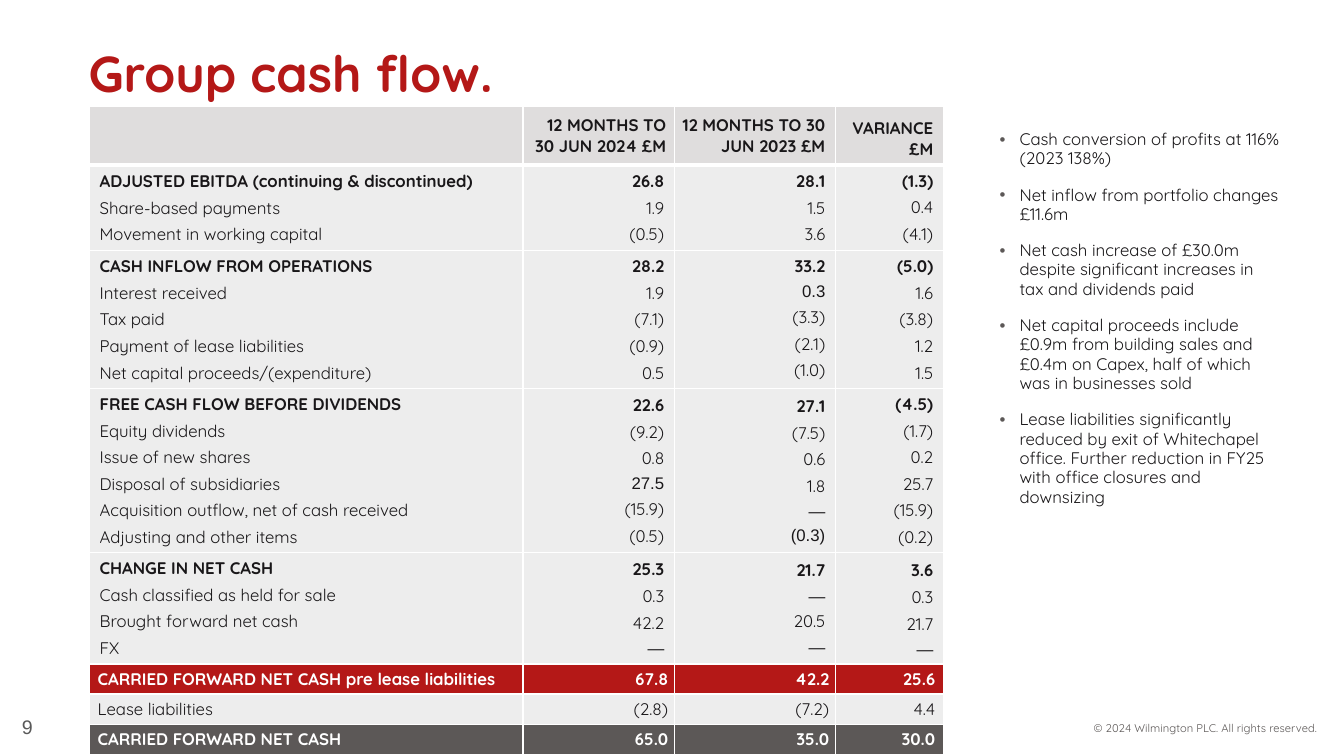
import pptx
import pptx.dml.color
import pptx.enum.text
import pptx.oxml
import pptx.oxml.ns
import pptx.util

Cm, Pt = pptx.util.Cm, pptx.util.Pt
ALIGN = pptx.enum.text.PP_ALIGN
ANCHOR = pptx.enum.text.MSO_ANCHOR
ANCHORS = {"t": ANCHOR.TOP, "m": ANCHOR.MIDDLE, "b": ANCHOR.BOTTOM}
NS = pptx.oxml.ns.nsdecls("a")

RED, GREY, INK, WHITE = "B41817", "5C5857", "191719", "FFFFFF"
HEAD_FILL, ROW_FILL = "DFDDDD", "EDEDED"
FONT, ALT_FONT = "Quicksand", "Arial"


def rgb(value):
    return pptx.dml.color.RGBColor.from_string(value)


def add_text(p, text, size=12, color=INK, bold=False, font=FONT,
             align=ALIGN.LEFT, after=0, spacing=None):
    p.alignment = align
    p.space_before, p.space_after = Pt(0), Pt(after)
    if spacing:
        p.line_spacing = spacing
    r = p.add_run()
    r.text = text
    r.font.size, r.font.bold, r.font.name = Pt(size), bold, font
    r.font.color.rgb = rgb(color)


def paragraphs(tf, count):
    return [tf.paragraphs[0]] + [tf.add_paragraph() for _ in range(count - 1)]


class Deck:
    """Holds the presentation style and the current slide."""

    def __init__(self, width, height):
        self.prs = pptx.Presentation()
        self.prs.slide_width, self.prs.slide_height = Cm(width), Cm(height)
        self.s = self.prs.slides.add_slide(self.prs.slide_layouts[1])

    def place(self, sp, box, anchor):
        sp.left, sp.top, sp.width, sp.height = map(Cm, box)
        tf = sp.text_frame
        tf.word_wrap = True
        tf.auto_size = pptx.enum.text.MSO_AUTO_SIZE.NONE
        tf.vertical_anchor = ANCHORS[anchor]
        return tf

    def title(self, text, box):
        tf = self.place(self.s.shapes.title, box, "m")
        add_text(tf.paragraphs[0], text, size=36, color=RED, bold=True)

    def bullets(self, items, box):
        tf = self.place(self.s.placeholders[1], box, "t")
        for p, item in zip(paragraphs(tf, len(items)), items):
            pPr = p._p.get_or_add_pPr()
            pPr.set("marL", str(Cm(0.5)))
            pPr.set("indent", str(-Cm(0.5)))
            for xml in (f'<a:buClr {NS}><a:srgbClr val="{GREY}"/></a:buClr>',
                        f'<a:buFont {NS} typeface="{ALT_FONT}"/>',
                        f'<a:buChar {NS} char="•"/>'):
                pPr.append(pptx.oxml.parse_xml(xml))
            add_text(p, item, after=12, spacing=0.96)

    def label(self, text, box, anchor="t", **fmt):
        sp = self.s.shapes.add_textbox(*map(Cm, box))
        add_text(self.place(sp, box, anchor).paragraphs[0], text, **fmt)

    def table(self, left, top, cols, rows):
        frame = self.s.shapes.add_table(len(rows), len(cols), Cm(left), Cm(top),
                                        Cm(sum(cols)), Cm(sum(rows)))
        tbl = frame.table
        tbl.first_row = tbl.horz_banding = False
        for col, width in zip(tbl.columns, cols):
            col.width = Cm(width)
        for row, height in zip(tbl.rows, rows):
            row.height = Cm(height)
        return tbl

    def cell(self, c, lines, fill, anchor="m", inset=(0.25, 0.13, 0.25, 0.13),
             top=1, bottom=1, bold_first=True, **fmt):
        c.margin_left, c.margin_top, c.margin_right, c.margin_bottom = map(Cm, inset)
        c.vertical_anchor = ANCHORS[anchor]
        tcPr = c._tc.get_or_add_tcPr()
        for side, width in (("L", 1), ("R", 1), ("T", top), ("B", bottom)):
            tcPr.append(pptx.oxml.parse_xml(
                f'<a:ln{side} {NS} w="{Pt(width)}"><a:solidFill>'
                f'<a:srgbClr val="{WHITE}"/></a:solidFill></a:ln{side}>'))
        c.fill.solid()
        c.fill.fore_color.rgb = rgb(fill)
        for i, (p, line) in enumerate(zip(paragraphs(c.text_frame, len(lines)), lines)):
            # A leading asterisk selects the alternative font
            font = ALT_FONT if line[:1] in ("*", "—") else FONT
            add_text(p, line.lstrip("*"), font=font, bold=bold_first and i == 0, **fmt)


HEADERS = [
    ([""], "m", (0.25, 0.13, 0.25, 0.13)),
    (["12 MONTHS TO 30 JUN 2024 £M"], "m", (0.2, 0, 0.2, 0)),
    (["12 MONTHS TO 30 JUN 2023 £M"], "m", (0.2, 0.13, 0.25, 0.13)),
    (["VARIANCE", "£M"], "b", (0.25, 0.13, 0.25, 0.13)),
]

# Each section: cell anchors, then lines of label, 2024, 2023 and variance
SECTIONS = [
    ("mmmt", [
        ("ADJUSTED EBITDA (continuing & discontinued)", "26.8", "28.1", "(1.3)"),
        ("Share-based payments", "1.9", "1.5", "0.4"),
        ("Movement in working capital", "(0.5)", "3.6", "(4.1)")]),
    ("mttt", [
        ("CASH INFLOW FROM OPERATIONS", "28.2", "33.2", "(5.0)"),
        ("Interest received", "1.9", "*0.3", "1.6"),
        ("Tax paid", "(7.1)", "(3.3)", "(3.8)"),
        ("Payment of lease liabilities", "(0.9)", "(2.1)", "1.2"),
        ("Net capital proceeds/(expenditure)", "0.5", "(1.0)", "1.5")]),
    ("mmmm", [
        ("FREE CASH FLOW BEFORE DIVIDENDS", "22.6", "27.1", "(4.5)"),
        ("Equity dividends", "(9.2)", "(7.5)", "(1.7)"),
        ("Issue of new shares", "0.8", "0.6", "0.2"),
        ("Disposal of subsidiaries", "*27.5", "1.8", "25.7"),
        ("Acquisition outflow, net of cash received", "(15.9)", "—", "(15.9)"),
        ("Adjusting and other items", "(0.5)", "*(0.3)", "(0.2)")]),
    ("mmmb", [
        ("CHANGE IN NET CASH", "25.3", "21.7", "3.6"),
        ("Cash classified as held for sale", "0.3", "—", "0.3"),
        ("Brought forward net cash", "42.2", "20.5", "21.7"),
        ("FX", "—", "—", "—")]),
]

TOTALS = [
    (RED, WHITE, True,
     ("CARRIED FORWARD NET CASH pre lease liabilities", "67.8", "42.2", "25.6")),
    (ROW_FILL, INK, False, ("Lease liabilities", "(2.8)", "(7.2)", "4.4")),
    (GREY, WHITE, True, ("CARRIED FORWARD NET CASH", "65.0", "35.0", "30.0")),
]

COMMENTS = [
    "Cash conversion of profits at 116% (2023 138%)",
    "Net inflow from portfolio changes £11.6m",
    "Net cash increase of £30.0m despite significant increases in tax and dividends paid",
    "Net capital proceeds include £0.9m from building sales and £0.4m on Capex, "
    "half of which was in businesses sold",
    "Lease liabilities significantly reduced by exit of Whitechapel office. "
    "Further reduction in FY25 with office closures and downsizing",
]


def main():
    deck = Deck(33.87, 19.05)

    # Title, commentary and footer
    deck.title("Group cash flow.", (1.98, 0.51, 27.31, 2.64))
    deck.bullets(COMMENTS, (24.94, 3.15, 7.62, 11.86))
    deck.label("© 2024 Wilmington PLC. All rights reserved.", (24.26, 18.06, 9.19, 0.61),
               size=8, color=GREY, align=ALIGN.RIGHT)
    deck.label("9", (0.3, 17.81, 7.62, 1.02), "m", size=14, color="595959", font=ALT_FONT)

    # Cash flow table
    tbl = deck.table(2.26, 2.69, [10.92, 3.81, 4.06, 2.72],
                     [1.47, 2.16, 3.3, 3.99, 2.77] + [0.76] * 3)
    aligns = [ALIGN.LEFT] + [ALIGN.RIGHT] * 3

    # Header row
    for j, (lines, anchor, inset) in enumerate(HEADERS):
        deck.cell(tbl.cell(0, j), lines, HEAD_FILL, anchor, inset, bottom=3,
                  align=aligns[j])
        for p in tbl.cell(0, j).text_frame.paragraphs:
            p.runs[0].font.bold = True

    # Sections, one table row each
    for i, (anchors, lines) in enumerate(SECTIONS, 1):
        for j, column in enumerate(zip(*lines)):
            deck.cell(tbl.cell(i, j), column, ROW_FILL, anchors[j],
                      top=3 if i == 1 else 1, align=aligns[j], after=4)

    # Closing rows
    for i, (fill, color, bold, values) in enumerate(TOTALS, 1 + len(SECTIONS)):
        for j, value in enumerate(values):
            inset = (0.15, 0, 0.15, 0) if j in (1, 2) else (0.2, 0.1, 0.2, 0.1)
            deck.cell(tbl.cell(i, j), [value], fill, inset=inset, bold_first=bold,
                      color=color, align=aligns[j])

    deck.prs.save("out.pptx")


if __name__ == "__main__":
    main()
